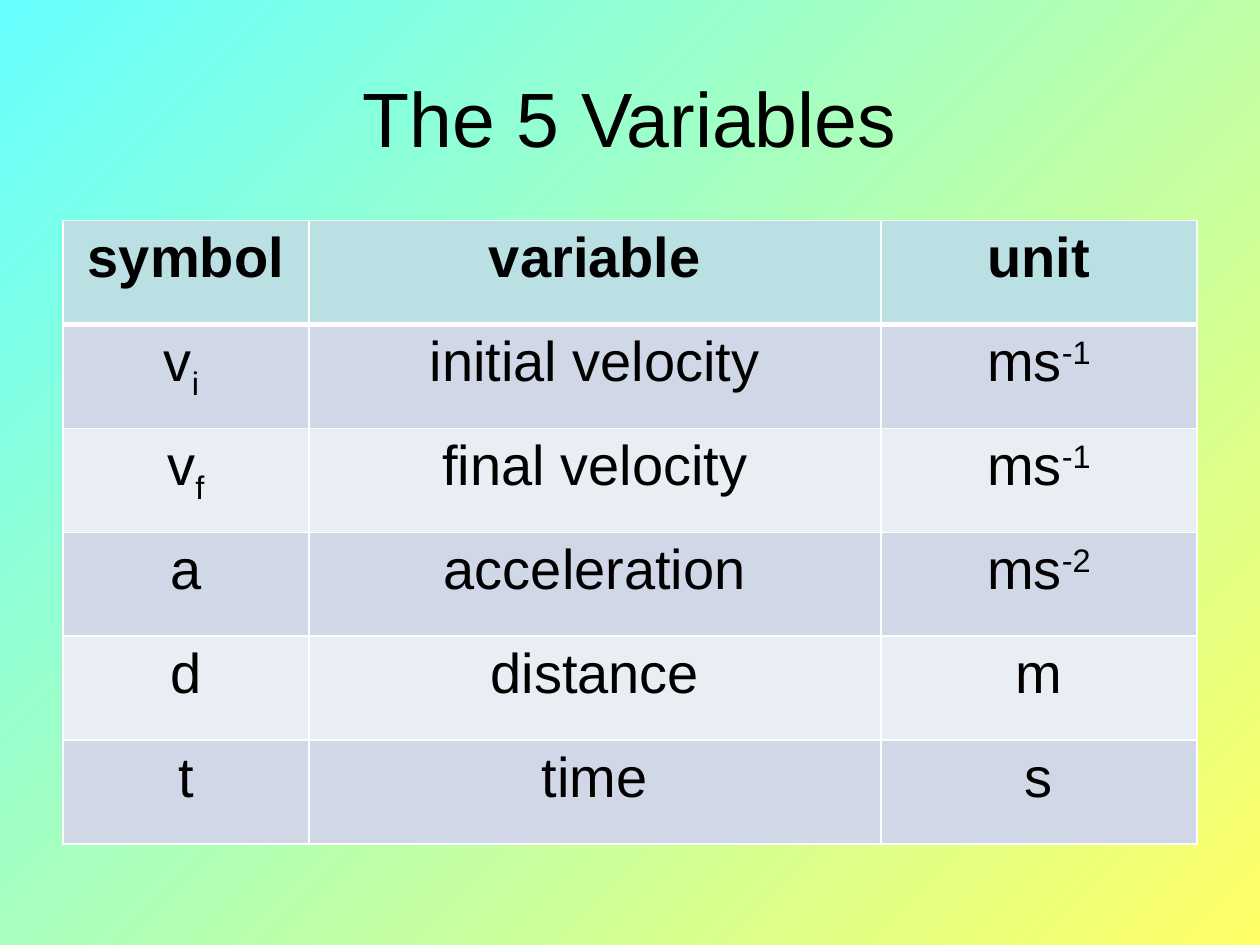
from dataclasses import dataclass

from lxml import etree
from pptx import Presentation
from pptx.dml.color import RGBColor
from pptx.enum.text import MSO_ANCHOR, PP_ALIGN
from pptx.oxml.ns import qn
from pptx.util import Pt

CENTER = PP_ALIGN.CENTER
MIDDLE = MSO_ANCHOR.MIDDLE
TOP = MSO_ANCHOR.TOP


@dataclass(frozen=True)
class Theme:
    font: str = "Arial"
    title_size: int = 44
    table_size: int = 32
    text: str = "000000"
    gradient: tuple = ("66FFFF", "FFFF66")
    header: str = "BBE0E3"
    bands: tuple = ("D0D8E8", "E9EDF4")
    border: str = "FFFFFF"


theme = Theme()


def add_span(para, text, size, bold=False, baseline=0):
    span = para.add_run()
    span.text = text
    span.font.name = theme.font
    span.font.size = Pt(size)
    span.font.bold = bold
    span.font.color.rgb = RGBColor.from_string(theme.text)
    if baseline:
        span.font._element.set("baseline", str(baseline * 1000))


def add_border(cell, side, width):
    properties = cell._tc.get_or_add_tcPr()
    line = etree.SubElement(properties, qn(f"a:ln{side}"), w=str(Pt(width)))
    fill = etree.SubElement(line, qn("a:solidFill"))
    etree.SubElement(fill, qn("a:srgbClr"), val=theme.border)


deck = Presentation()
deck.slide_width = Pt(720)
deck.slide_height = Pt(540)
page = deck.slides.add_slide(deck.slide_layouts[5])

backdrop = page.background.fill
backdrop.gradient()
backdrop.gradient_angle = 315
for stop, color, position in zip(backdrop.gradient_stops, theme.gradient, (0, 1)):
    stop.color.rgb = RGBColor.from_string(color)
    stop.position = position

title = page.shapes.title
title.left, title.top, title.width, title.height = Pt(36), Pt(21.6), Pt(648), Pt(90)
title.text_frame.vertical_anchor = MIDDLE
title_para = title.text_frame.paragraphs[0]
title_para.alignment = CENTER
add_span(title_para, "The 5 Variables", theme.title_size)

rows = [
    [[("symbol", 0)], [("variable", 0)], [("unit", 0)]],
    [[("v", 0), ("i ", -25)], [("initial velocity", 0)], [("ms", 0), ("-1", 30)]],
    [[("v", 0), ("f", -25)], [("final velocity", 0)], [("ms", 0), ("-1", 30)]],
    [[("a", 0)], [("acceleration", 0)], [("ms", 0), ("-2", 30)]],
    [[("d", 0)], [("distance", 0)], [("m", 0)]],
    [[("t", 0)], [("time", 0)], [("s", 0)]],
]
column_widths = (140.5, 327, 180.5)
row_height = 59.4

table = page.shapes.add_table(
    len(rows), len(column_widths),
    Pt(36), Pt(126), Pt(sum(column_widths)), Pt(row_height * len(rows)),
).table
for column, width in zip(table.columns, column_widths):
    column.width = Pt(width)

for row_index, row in enumerate(rows):
    table.rows[row_index].height = Pt(row_height)
    is_header = row_index == 0
    color = theme.header if is_header else theme.bands[(row_index - 1) % 2]
    top_width = 3 if row_index == 1 else 1
    bottom_width = 3 if is_header else 1
    for column_index, parts in enumerate(row):
        cell = table.cell(row_index, column_index)
        for side, width in zip("LRTB", (1, 1, top_width, bottom_width)):
            add_border(cell, side, width)
        cell.fill.solid()
        cell.fill.fore_color.rgb = RGBColor.from_string(color)
        cell.vertical_anchor = TOP
        para = cell.text_frame.paragraphs[0]
        para.alignment = CENTER
        for text, baseline in parts:
            add_span(para, text, theme.table_size, is_header, baseline)

deck.save("out.pptx")
